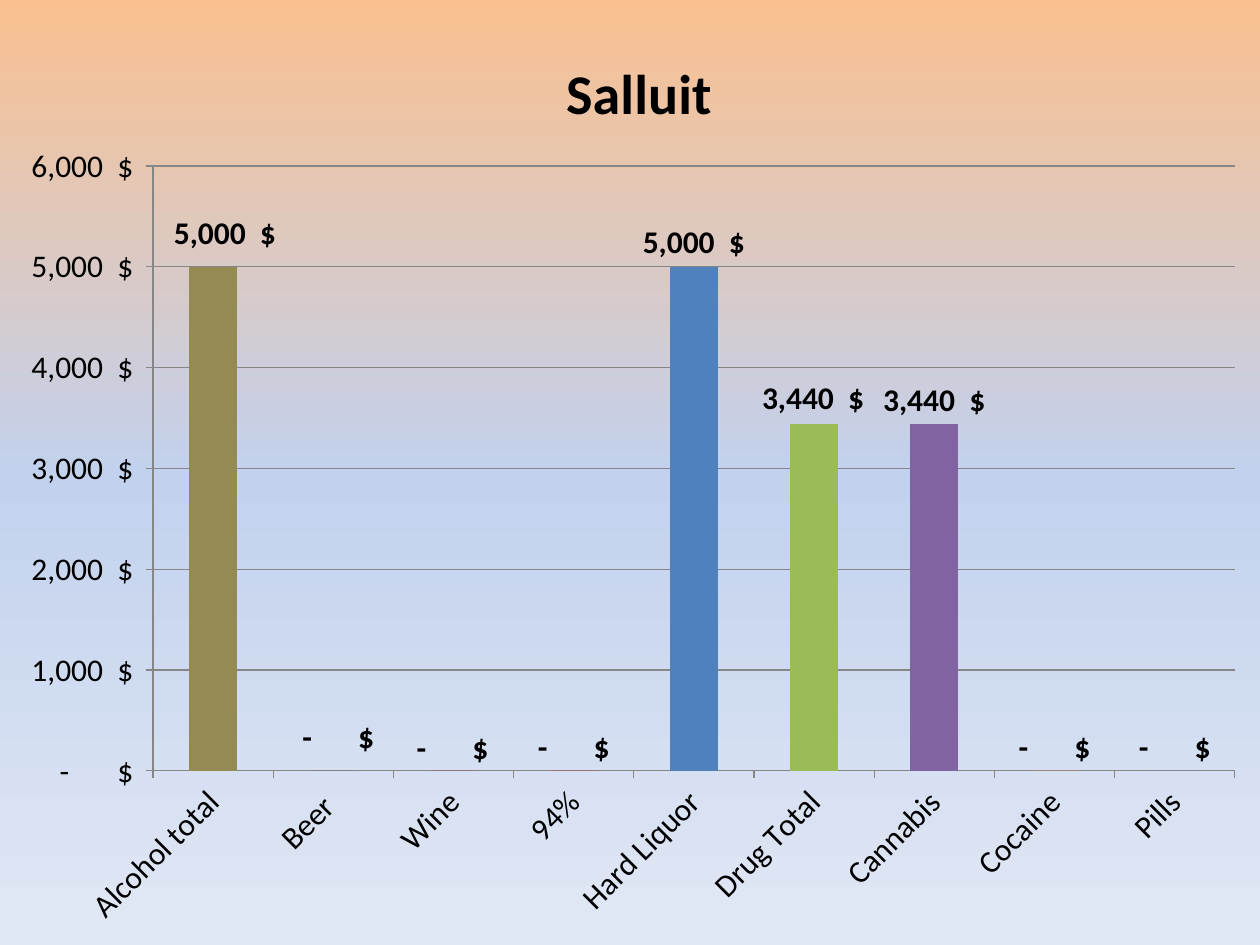
from dataclasses import dataclass

from pptx import Presentation, oxml
from pptx import util as u
from pptx.chart.chart import Chart
from pptx.chart.data import CategoryChartData
from pptx.dml.color import RGBColor
from pptx.enum import chart as charts
from pptx.oxml import ns

PX = 7257.6  # EMU per px, 126 px to the inch
WIDTH, HEIGHT = 1260, 945
NUMBER_FORMAT = (r'_ * #,##0_)\ "$"_ ;_ * \(#,##0\)\ "$"_ ;'
                 r'_ * "-"??_)\ "$"_ ;_ @_ ')


@dataclass(frozen=True)
class Theme:
    font: str = "Calibri"
    text: str = "000000"
    line: str = "868686"
    title_size: int = 32
    body_size: int = 18
    background: tuple = ((0, "FAC090"), (50, "C2D1ED"), (100, "E1E8F5"))


@dataclass(frozen=True)
class Bar:
    category: str
    value: int
    color: str
    label_shift: tuple[int, int] | None = None  # px from the usual place


THEME = Theme()
BARS = [
    Bar("Alcohol total", 5000, "948A54", (12, -9)),
    Bar("Beer ", 0, "604A7B", (5, -10)),
    Bar("Wine", 0, "953735", (-1, 1)),
    Bar("94%", 0, "FF0000"),
    Bar("Hard Liquor", 5000, "4F81BD"),
    Bar("Drug Total", 3440, "9BBB59", (-1, -2)),
    Bar("Cannabis", 3440, "8064A2"),
    Bar("Cocaine", 0, "F79646"),
    Bar("Pills", 0, "4F81BD"),
]


def px(length: int) -> u.Emu:
    return u.Emu(round(length * PX))


def format_font(font, size: int = THEME.body_size, bold: bool = False) -> None:
    font.name, font.size, font.bold = THEME.font, u.Pt(size), bold
    font.color.rgb = RGBColor.from_string(THEME.text)


def write(frame, content: str, **style) -> None:
    paragraph = frame.paragraphs[0]
    run = paragraph.add_run()
    run.text = content
    format_font(run.font, **style)


def manual_layout(x: int, y: int, width: int = 0, height: int = 0,
                  edge: bool = True):
    """Chart layout in px, from the chart's edge or as a shift."""
    values = []
    if width:
        values.append(("layoutTarget", "inner"))
    if edge:
        values += [("xMode", "edge"), ("yMode", "edge")]
    values += [("x", x / WIDTH), ("y", y / HEIGHT)]
    if width:
        values += [("w", width / WIDTH), ("h", height / HEIGHT)]
    items = "".join(f'<c:{tag} val="{value}"/>' for tag, value in values)
    return oxml.parse_xml(f'<c:layout {ns.nsdecls("c")}><c:manualLayout>'
                          f'{items}</c:manualLayout></c:layout>')


def paint_background(slide) -> None:
    fill = slide.background.fill
    fill.gradient()
    fill.gradient_angle = 270
    stops = "".join(f'<a:gs pos="{position * 1000}"><a:srgbClr val="{color}"/></a:gs>'
                    for position, color in THEME.background)
    old = slide.element.xpath(".//p:bg//a:gsLst")[0]
    old.getparent().replace(old, oxml.parse_xml(
        f'<a:gsLst {ns.nsdecls("a")}>{stops}</a:gsLst>'))


def add_bar_chart(slide) -> Chart:
    data = CategoryChartData(number_format=NUMBER_FORMAT)
    data.categories = [bar.category for bar in BARS]
    data.add_series("Salluit", [bar.value for bar in BARS])
    frame = slide.shapes.add_chart(charts.XL_CHART_TYPE.COLUMN_CLUSTERED,
                                   0, 0, px(WIDTH), px(HEIGHT), data)
    chart = frame.chart
    chart.has_legend = False
    format_font(chart.font)
    return chart


def format_title(chart: Chart) -> None:
    chart.has_title = True
    write(chart.chart_title.text_frame, "Salluit", size=THEME.title_size, bold=True)
    chart.chart_title.include_in_layout = False
    title = chart.element.xpath(".//c:title")[0]
    for layout in title.xpath("./c:layout"):
        title.remove(layout)
    title.xpath("./c:tx")[0].addnext(manual_layout(556, 44))


def format_axes(chart: Chart) -> None:
    value_axis, category_axis = chart.value_axis, chart.category_axis
    value_axis.minimum_scale, value_axis.maximum_scale = 0, 6000
    value_axis.major_unit = 1000
    value_axis.has_major_gridlines = True
    value_axis.tick_labels.number_format = NUMBER_FORMAT
    value_axis.tick_labels.number_format_is_linked = False
    for axis in (value_axis, category_axis):
        axis.major_tick_mark = charts.XL_TICK_MARK.OUTSIDE
        format_font(axis.tick_labels.font)
    for part in (value_axis, category_axis, value_axis.major_gridlines):
        part.format.line.color.rgb = RGBColor.from_string(THEME.line)
        part.format.line.width = u.Pt(0.75)
    # Slanted category names
    body = chart.element.xpath(".//c:catAx/c:txPr/a:bodyPr")[0]
    body.set("rot", "-2700000")
    body.set("vert", "horz")


def format_bars(chart: Chart) -> None:
    plot = chart.plots[0]
    plot.gap_width = 150
    plot.vary_by_categories = False
    series = plot.series[0]
    series.format.fill.solid()
    series.format.fill.fore_color.rgb = RGBColor.from_string("4F81BD")
    labels = series.data_labels
    labels.show_value = True
    labels.number_format = NUMBER_FORMAT
    labels.number_format_is_linked = False
    labels.position = charts.XL_LABEL_POSITION.OUTSIDE_END
    format_font(labels.font, bold=True)
    for index, bar in enumerate(BARS):
        point = series.points[index]
        point.format.fill.solid()
        point.format.fill.fore_color.rgb = RGBColor.from_string(bar.color)
        if bar.label_shift:
            format_font(point.data_label.font, bold=True)
            point.data_label.position = charts.XL_LABEL_POSITION.OUTSIDE_END
            place_label(chart, index, bar.label_shift)


def place_label(chart: Chart, index: int, shift: tuple[int, int]) -> None:
    anchor = chart.element.xpath(f".//c:dLbl/c:idx[@val='{index}']")[0]
    number = oxml.parse_xml(f'<c:numFmt {ns.nsdecls("c")} sourceLinked="0"/>')
    number.set("formatCode", NUMBER_FORMAT)
    anchor.addnext(number)
    anchor.addnext(manual_layout(*shift, edge=False))


def place_plot(chart: Chart) -> None:
    area = chart.element.xpath(".//c:plotArea")[0]
    for layout in area.xpath("./c:layout"):
        area.remove(layout)
    area.insert(0, manual_layout(153, 166, 1082, 605))


def main() -> None:
    presentation = Presentation()
    presentation.slide_width, presentation.slide_height = px(WIDTH), px(HEIGHT)
    slide = presentation.slides.add_slide(presentation.slide_layouts[6])
    paint_background(slide)

    # Spending chart across the whole slide
    chart = add_bar_chart(slide)
    format_title(chart)
    format_axes(chart)
    format_bars(chart)
    place_plot(chart)

    presentation.save("out.pptx")


if __name__ == "__main__":
    main()
